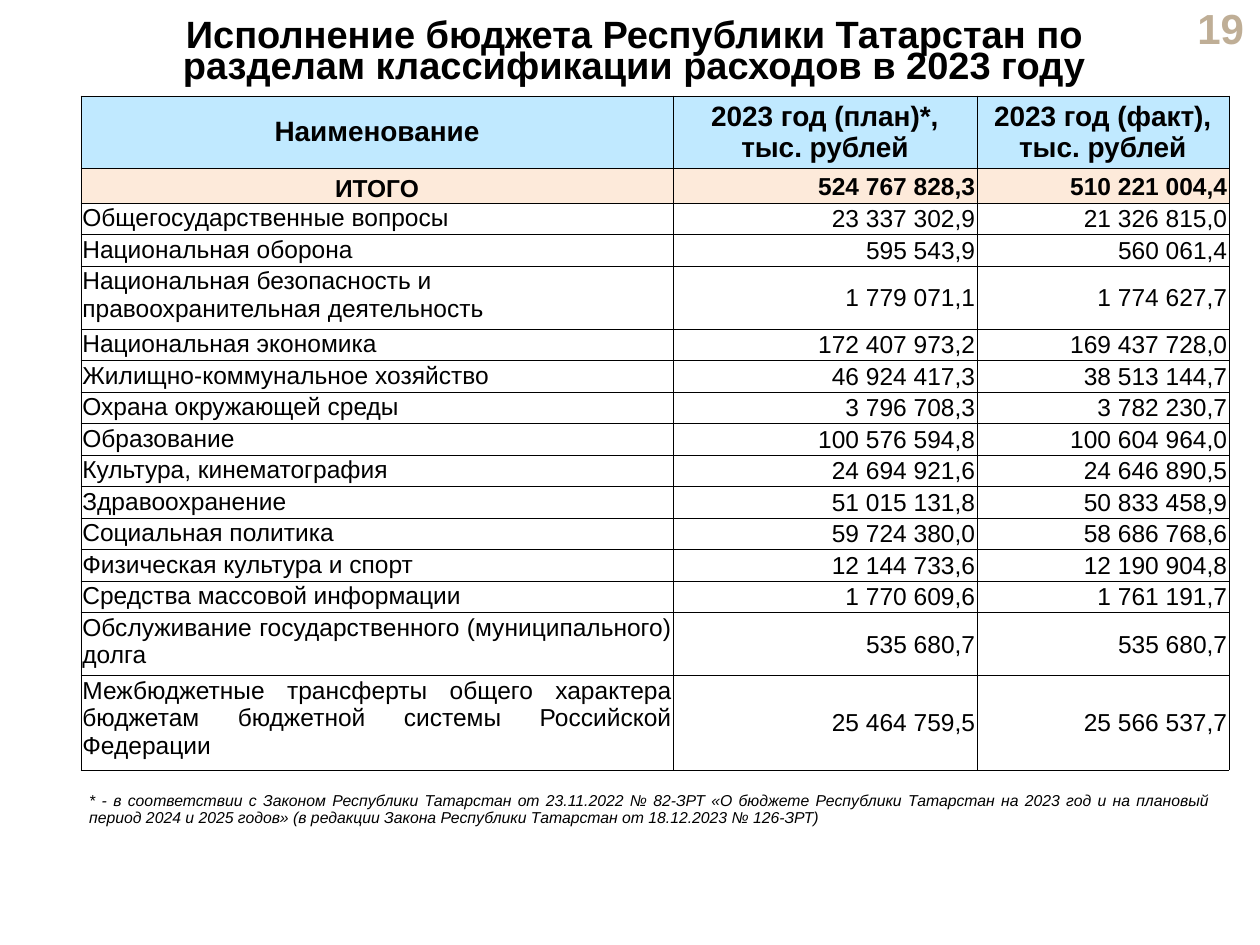
from lxml import etree
from pptx import Presentation
from pptx.dml.color import RGBColor
from pptx.enum.text import MSO_ANCHOR, PP_ALIGN
from pptx.oxml.ns import qn
from pptx.util import Cm, Pt

BLACK = RGBColor(0x00, 0x00, 0x00)
WHITE = RGBColor(0xFF, 0xFF, 0xFF)
BEIGE = RGBColor(0xBF, 0xAE, 0x96)
HEADER_BLUE = RGBColor(0xC0, 0xE9, 0xFF)
TOTAL_PEACH = RGBColor(0xFD, 0xEA, 0xDA)

COLUMN_WIDTHS = [11.94, 6.12, 5.08]
HEADER = ("Наименование", "2023 год (план)*,\vтыс. рублей", "2023 год (факт),\vтыс. рублей")
TOTAL = ("ИТОГО", "524 767 828,3", "510 221 004,4")
# Section, plan, actual, lines of height
SECTIONS = [
    ("Общегосударственные вопросы", "23 337 302,9", "21 326 815,0", 1),
    ("Национальная оборона", "595 543,9", "560 061,4", 1),
    ("Национальная безопасность и правоохранительная деятельность",
     "1 779 071,1", "1 774 627,7", 2),
    ("Национальная экономика", "172 407 973,2", "169 437 728,0", 1),
    ("Жилищно-коммунальное хозяйство", "46 924 417,3", "38 513 144,7", 1),
    ("Охрана окружающей среды", "3 796 708,3", "3 782 230,7", 1),
    ("Образование", "100 576 594,8", "100 604 964,0", 1),
    ("Культура, кинематография", "24 694 921,6", "24 646 890,5", 1),
    ("Здравоохранение", "51 015 131,8", "50 833 458,9", 1),
    ("Социальная политика", "59 724 380,0", "58 686 768,6", 1),
    ("Физическая культура и спорт", "12 144 733,6", "12 190 904,8", 1),
    ("Средства массовой информации", "1 770 609,6", "1 761 191,7", 1),
    ("Обслуживание государственного (муниципального) долга",
     "535 680,7", "535 680,7", 2),
    ("Межбюджетные трансферты общего характера бюджетам бюджетной системы "
     "Российской Федерации", "25 464 759,5", "25 566 537,7", 3),
]


def style_paragraph(paragraph, size, align, color=BLACK, bold=False, italic=False):
    paragraph.alignment = align
    font = paragraph.font
    font.name = "Arial"
    font.size = Pt(size)
    font.bold = bold
    font.italic = italic
    font.color.rgb = color


def add_borders(cell):
    properties = cell._tc.get_or_add_tcPr()
    for side in ("lnL", "lnR", "lnT", "lnB"):
        line = etree.SubElement(properties, qn(f"a:{side}"), w=str(Pt(0.25)))
        fill = etree.SubElement(line, qn("a:solidFill"))
        etree.SubElement(fill, qn("a:srgbClr"), val=str(BLACK))


presentation = Presentation()
presentation.slide_width = Cm(25.4)
presentation.slide_height = Cm(19.05)
slide = presentation.slides.add_slide(presentation.slide_layouts[6])

page_number = slide.shapes.add_textbox(Cm(23.7), Cm(0.13), Cm(1.63), Cm(0.86)).text_frame
page_number.word_wrap = True
page_number.vertical_anchor = MSO_ANCHOR.MIDDLE
page_number.text = "19"
style_paragraph(page_number.paragraphs[0], 24, PP_ALIGN.RIGHT, BEIGE, bold=True)

title = slide.shapes.add_textbox(Cm(1.55), Cm(0.33), Cm(22.48), Cm(1.6)).text_frame
title.word_wrap = True
title.margin_left = title.margin_right = Cm(0.5)
title.text = ("Исполнение бюджета Республики Татарстан по разделам "
              "классификации расходов в 2023 году")
style_paragraph(title.paragraphs[0], 21.7, PP_ALIGN.CENTER, bold=True)
title.paragraphs[0].line_spacing = 0.7

rows = [HEADER, TOTAL] + [section[:3] for section in SECTIONS]
row_heights = [1.47, 0.69] + [section[3] * 1.27 / 2 for section in SECTIONS]
budget = slide.shapes.add_table(len(rows), len(COLUMN_WIDTHS), Cm(1.63), Cm(1.93),
                                Cm(sum(COLUMN_WIDTHS)), Cm(sum(row_heights))).table
budget.first_row = False
budget.horz_banding = False
for column, width in zip(budget.columns, COLUMN_WIDTHS):
    column.width = Cm(width)

for r, (values, height) in enumerate(zip(rows, row_heights)):
    budget.rows[r].height = Cm(height)
    is_header = r == 0
    is_total = r == 1
    for c, value in enumerate(values):
        cell = budget.cell(r, c)
        cell.text = value
        cell.margin_left = cell.margin_right = Cm(0.1 if is_header else 0.03)
        cell.margin_top = Cm(0 if is_header else 0.03)
        cell.margin_bottom = 0

        anchor, align = MSO_ANCHOR.MIDDLE, PP_ALIGN.RIGHT
        if is_header:
            align = PP_ALIGN.CENTER
        elif c == 0 and is_total:
            anchor, align = MSO_ANCHOR.BOTTOM, PP_ALIGN.CENTER
        elif c == 0:
            anchor = MSO_ANCHOR.TOP
            align = PP_ALIGN.JUSTIFY if r >= len(rows) - 2 else PP_ALIGN.LEFT
        cell.vertical_anchor = anchor
        style_paragraph(cell.text_frame.paragraphs[0], 16 if is_header else 14,
                        align, bold=is_header or is_total)

        add_borders(cell)
        cell.fill.solid()
        cell.fill.fore_color.rgb = (HEADER_BLUE if is_header
                                    else TOTAL_PEACH if is_total else WHITE)

footnote = slide.shapes.add_textbox(Cm(1.55), Cm(15.85), Cm(23.06), Cm(1.57)).text_frame
footnote.word_wrap = True
footnote.text = (
    "* - в соответствии с Законом Республики Татарстан от 23.11.2022 № 82-ЗРТ "
    "«О бюджете Республики Татарстан на 2023 год и на плановый период 2024 и 2025 годов» "
    "(в редакции Закона Республики Татарстан от 18.12.2023 № 126-ЗРТ)")
style_paragraph(footnote.paragraphs[0], 9, PP_ALIGN.JUSTIFY, italic=True)
footnote.paragraphs[0].line_spacing = 0.9

presentation.save("out.pptx")
